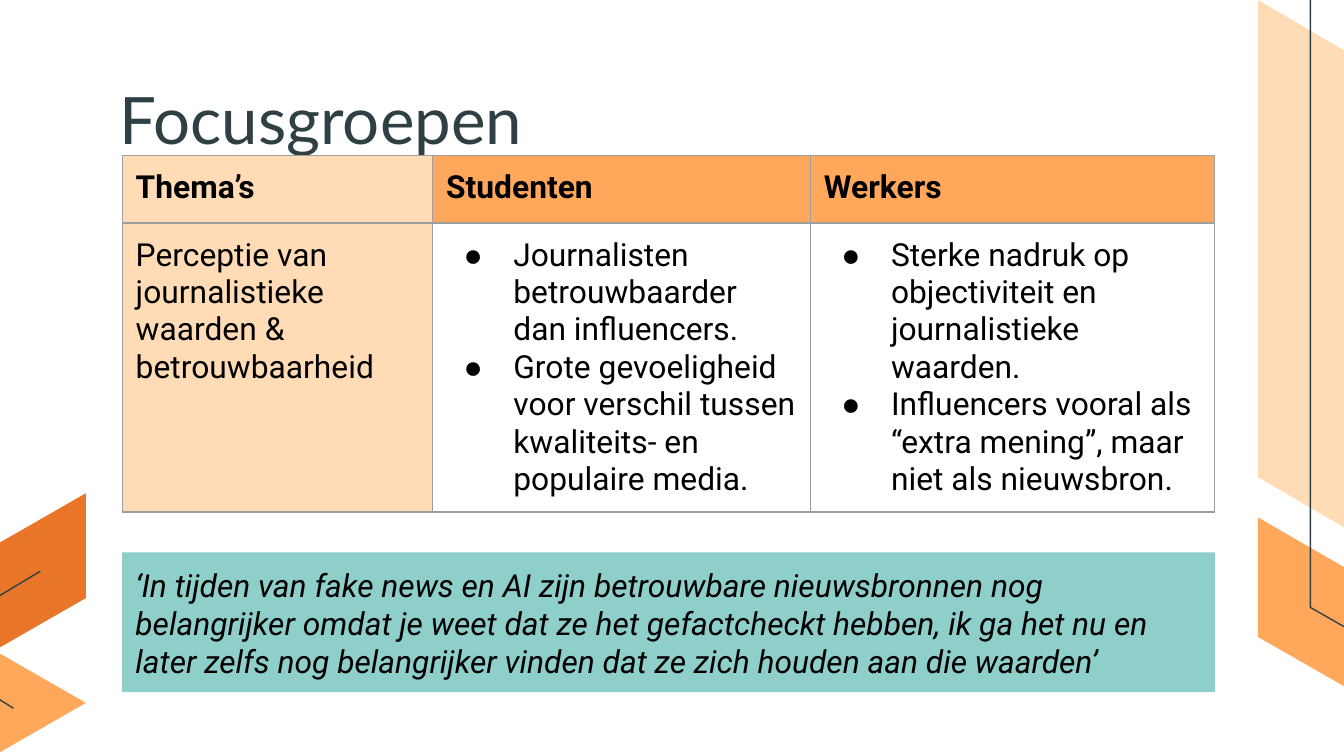
"""Build the focus group slide: a theme table, a quote and side decorations."""
import pptx
import pptx.dml.color
import pptx.enum.shapes
import pptx.enum.text
import pptx.util
from lxml import etree
from pptx.oxml.ns import qn

COLORS = {
    "ink": "2F4044", "text": "000000", "border": "9E9E9E", "teal": "8ECFC9",
    "peach": "FFDCB6", "orange": "FFA85C", "rust": "E97529",
}
TITLE = "Focusgroepen"
ROWS = [
    ["Thema’s", "Studenten", "Werkers"],
    [
        "Perceptie van journalistieke waarden & betrouwbaarheid",
        ["Journalisten betrouwbaarder dan influencers.",
         "Grote gevoeligheid voor verschil tussen kwaliteits- en populaire media."],
        ["Sterke nadruk op objectiviteit en journalistieke waarden.",
         "Influencers vooral als “extra mening”, maar niet als nieuwsbron."],
    ],
]
FILLS = [["peach", "orange", "orange"], ["peach", None, None]]
QUOTE = (
    "‘In tijden van fake news en AI zijn betrouwbare nieuwsbronnen nog belangrijker "
    "omdat je weet dat ze het gefactcheckt hebben, ik ga het nu en later zelfs nog "
    "belangrijker vinden dat ze zich houden aan die waarden’"
)
BANDS = [
    ("peach", [(9.36, 0), (9.36, 3.55), (10.13, 4), (10.13, 0.45)]),
    ("orange", [(9.36, 3.85), (9.36, 4.74), (10.9, 5.62), (10.9, 4.74)]),
    ("rust", [(-0.04, 4.06), (0.64, 3.67), (0.64, 4.45), (-0.04, 4.84)]),
    ("orange", [(-0.04, 5.62), (-0.72, 5.23), (-0.04, 4.84), (0.64, 5.23)]),
]
OUTLINES = [
    [(9.75, 0), (9.75, 4.52), (11.36, 5.44)],
    [(0.1, 5.27), (-0.33, 5), (-0.33, 4.63), (0.3, 4.25)],
]
LEFT, TABLE_TOP, QUOTE_TOP = 0.91, 1.16, 4.11
COL_WIDTHS = [2.31, 2.81, 3.01]
ROW_HEIGHTS = [0.5, 2.15]
PAD = pptx.util.Inches(0.1)


def inches(*values):
    return [pptx.util.Inches(v) for v in values]


def rgb(name):
    return pptx.dml.color.RGBColor.from_string(COLORS[name])


def add_bullet(p):
    pPr = p._p.get_or_add_pPr()
    pPr.set("marL", str(pptx.util.Inches(0.5)))
    pPr.set("indent", str(pptx.util.Inches(-0.37)))
    clr = etree.SubElement(pPr, qn("a:buClr"))
    etree.SubElement(clr, qn("a:srgbClr"), val=COLORS["text"])
    etree.SubElement(pPr, qn("a:buFont"), typeface="Arial")
    etree.SubElement(pPr, qn("a:buChar"), char="●")


def write(tf, text, size=17, font="Roboto", color="text", bold=False, italic=False):
    bulleted = isinstance(text, list)
    for i, line in enumerate(text if bulleted else [text]):
        p = tf.add_paragraph() if i else tf.paragraphs[0]
        p.alignment = pptx.enum.text.PP_ALIGN.LEFT
        if bulleted:
            add_bullet(p)
        r = p.add_run()
        r.text = line
        r.font.size, r.font.name = pptx.util.Pt(size), font
        r.font.bold, r.font.italic = bold, italic
        r.font.color.rgb = rgb(color)


def set_frame(tf, top=PAD):
    tf.word_wrap = True
    tf.auto_size = pptx.enum.text.MSO_AUTO_SIZE.NONE
    tf.vertical_anchor = pptx.enum.text.MSO_ANCHOR.TOP
    tf.margin_left = tf.margin_right = tf.margin_bottom = PAD
    tf.margin_top = top


def add_outline(s, points, fill=None):
    points = [inches(*point) for point in points]
    builder = s.shapes.build_freeform(*points[0])
    builder.add_line_segments(points[1:], close=fill is not None)
    sp = builder.convert_to_shape()
    sp.shadow.inherit = False
    if fill:
        sp.fill.solid()
        sp.fill.fore_color.rgb = rgb(fill)
        sp.line.fill.background()
    else:
        sp.fill.background()
        sp.line.color.rgb = rgb("ink")
        sp.line.width = pptx.util.Pt(0.75)


def format_cell(cell, fill):
    cell.margin_left = cell.margin_right = cell.margin_top = cell.margin_bottom = PAD
    tcPr = cell._tc.get_or_add_tcPr()
    for side in "LRTB":
        ln = etree.SubElement(tcPr, qn(f"a:ln{side}"), w=str(pptx.util.Pt(0.75)))
        solid = etree.SubElement(ln, qn("a:solidFill"))
        etree.SubElement(solid, qn("a:srgbClr"), val=COLORS["border"])
    if fill:
        cell.fill.solid()
        cell.fill.fore_color.rgb = rgb(fill)
    else:
        cell.fill.background()


def add_theme_table(s):
    box = inches(LEFT, TABLE_TOP, sum(COL_WIDTHS), sum(ROW_HEIGHTS))
    table = s.shapes.add_table(len(ROWS), len(COL_WIDTHS), *box).table
    table.first_row = table.horz_banding = False
    for col, width in zip(table.columns, inches(*COL_WIDTHS)):
        col.width = width
    for row, height in zip(table.rows, inches(*ROW_HEIGHTS)):
        row.height = height
    for i, (texts, fills) in enumerate(zip(ROWS, FILLS)):
        for j, (text, fill) in enumerate(zip(texts, fills)):
            cell = table.cell(i, j)
            format_cell(cell, fill)
            write(cell.text_frame, text, bold=i == 0)


def add_quote(s):
    box = inches(LEFT, QUOTE_TOP, sum(COL_WIDTHS), 1.04)
    sp = s.shapes.add_shape(pptx.enum.shapes.MSO_SHAPE.RECTANGLE, *box)
    sp.shadow.inherit = False
    sp.fill.solid()
    sp.fill.fore_color.rgb = rgb("teal")
    sp.line.fill.background()
    set_frame(sp.text_frame)
    write(sp.text_frame, QUOTE, italic=True)


def main():
    prs = pptx.Presentation()
    prs.slide_width = pptx.util.Inches(10)
    prs.slide_height = prs.slide_width * 9 // 16
    s = prs.slides.add_slide(prs.slide_layouts[5])
    title = s.shapes.title
    title.left, title.top, title.width, title.height = inches(0.79, 0.59, 8.43, 0.57)
    set_frame(title.text_frame, top=0)
    write(title.text_frame, TITLE, size=35, font="Lato", color="ink")
    for fill, points in BANDS:
        add_outline(s, points, fill)
    for points in OUTLINES:
        add_outline(s, points)
    add_theme_table(s)
    add_quote(s)
    prs.save("out.pptx")


if __name__ == "__main__":
    main()
